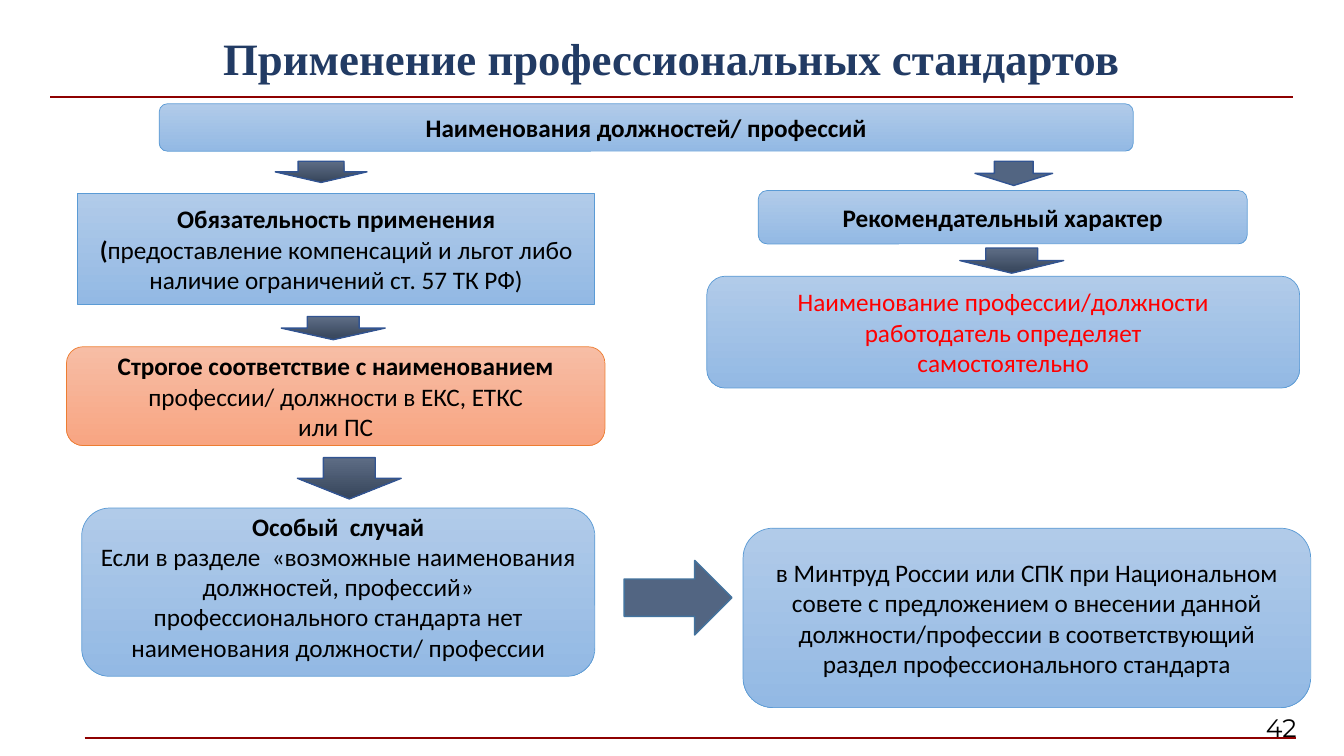
from pptx import Presentation
from pptx.dml.color import RGBColor
from pptx.enum.shapes import MSO_CONNECTOR, MSO_SHAPE
from pptx.enum.text import MSO_ANCHOR, PP_ALIGN
from pptx.oxml import parse_xml
from pptx.oxml.ns import nsdecls
from pptx.util import Inches, Pt

STRAIGHT = MSO_CONNECTOR.STRAIGHT
ROUNDED = MSO_SHAPE.ROUNDED_RECTANGLE
DOWN = MSO_SHAPE.DOWN_ARROW
RIGHT = MSO_SHAPE.RIGHT_ARROW
MIDDLE = MSO_ANCHOR.MIDDLE
CENTER = PP_ALIGN.CENTER
ALIGN_RIGHT = PP_ALIGN.RIGHT

BLACK = "000000"
RED = "FF0000"
NAVY = "223B64"
RULE = "8E0000"
SLATE = ("526582",)
SLATE_GRADIENT = ("5E6D85", "35445A")
BLUE = ("B1CBE9", "93B9E4")
BLUE_EDGE = "5B9BD5"
ORANGE = ("F7BDA5", "F8A582")
ORANGE_EDGE = "ED7D31"
ARROW_EDGE = "325491"


def color(value):
    return RGBColor.from_string(value)


class SlideBuilder:
    font = "Calibri"
    size = 18

    def __init__(self, slide):
        self.slide = slide

    def rule(self, left, right, top):
        connector = self.slide.shapes.add_connector(
            STRAIGHT, Inches(left), Inches(top), Inches(right), Inches(top))
        connector.line.color.rgb = color(RULE)
        connector.line.width = Pt(1.5)
        connector._element.spPr.append(parse_xml(f"<a:effectLst {nsdecls('a')}/>"))

    def add_text(self, frame, paragraphs, text_color=BLACK, font=font, size=size, align=CENTER):
        frame.word_wrap = True
        frame.vertical_anchor = MIDDLE
        for index, runs in enumerate(paragraphs):
            paragraph = frame.add_paragraph() if index else frame.paragraphs[0]
            paragraph.alignment = align
            for text, bold in runs:
                run = paragraph.add_run()
                run.text = text
                run.font.name = font
                run.font.size = Pt(size)
                run.font.bold = bold
                run.font.color.rgb = color(text_color)

    def label(self, area, text, bold=False, line_spacing=None, **style):
        frame = self.slide.shapes.add_textbox(*map(Inches, area)).text_frame
        frame.margin_left = frame.margin_right = 0
        frame.margin_top = frame.margin_bottom = 0
        self.add_text(frame, [[(text, bold)]], **style)
        frame.paragraphs[0].line_spacing = line_spacing

    def shape(self, kind, area, colors, edge, edge_width):
        shape = self.slide.shapes.add_shape(kind, *map(Inches, area))
        shape.shadow.inherit = False
        if len(colors) == 1:
            shape.fill.solid()
            shape.fill.fore_color.rgb = color(colors[0])
        else:
            shape.fill.gradient()
            shape.fill.gradient_angle = 270
            for stop, value in zip(shape.fill.gradient_stops, colors):
                stop.color.rgb = color(value)
        shape.line.color.rgb = color(edge)
        shape.line.width = Pt(edge_width)
        return shape

    def box(self, area, paragraphs, colors=BLUE, edge=BLUE_EDGE, text_color=BLACK):
        shape = self.shape(ROUNDED, area, colors, edge, 0.5)
        self.add_text(shape.text_frame, paragraphs, text_color)
        return shape

    def arrow(self, area, colors=SLATE_GRADIENT, kind=DOWN, edge=ARROW_EDGE):
        self.shape(kind, area, colors, edge, 1)


def main():
    presentation = Presentation()
    presentation.slide_width = Inches(13.33)
    presentation.slide_height = Inches(7.5)
    builder = SlideBuilder(presentation.slides.add_slide(presentation.slide_layouts[6]))

    builder.rule(0.84, 12.85, 7.32)
    builder.rule(0.5, 12.82, 0.96)
    builder.label((0.5, 0.25, 12.32, 0.71), "Применение профессиональных стандартов", bold=True,
                  line_spacing=0.9, text_color=NAVY, font="Times New Roman", size=32)

    builder.box((1.58, 1.03, 9.66, 0.47), [[("Наименования должностей/ профессий", True)]])
    mandatory = builder.box((0.77, 1.92, 5.13, 1.1), [[
        ("Обязательность применения (", True),
        ("предоставление компенсаций и льгот либо наличие ограничений ст. 57 ТК РФ)", False)]])
    mandatory.adjustments[0] = 0
    builder.box((7.52, 1.89, 4.85, 0.53), [[("Рекомендательный характер", True)]])
    builder.box((7.01, 2.74, 5.88, 1.11), [
        [("Наименование профессии/должности работодатель определяет", False)],
        [("самостоятельно", False)]], text_color=RED)
    special_case = builder.box((0.81, 5.04, 5.09, 1.67), [
        [("Особый  случай", True)],
        [("Если в разделе  «возможные наименования должностей, профессий» "
          "профессионального стандарта нет наименования должности/ профессии", False)]])
    special_case.text_frame.margin_bottom = Inches(0.16)
    builder.box((7.37, 5.24, 5.63, 1.78), [[
        ("в Минтруд России или СПК при Национальном совете с предложением о внесении данной "
         "должности/профессии в соответствующий раздел профессионального стандарта", False)]])
    builder.box((0.66, 3.44, 5.34, 0.98), [
        [("Строгое соответствие с наименованием ", True),
         ("профессии/ должности в ЕКС, ЕТКС", False)],
        [("или ПС", False)]], ORANGE, ORANGE_EDGE)

    for area in ((2.73, 1.6, 0.91, 0.21), (2.79, 3.14, 1.03, 0.23),
                 (2.95, 4.54, 1.03, 0.41), (9.52, 2.46, 1.03, 0.25)):
        builder.arrow(area)
    builder.arrow((9.67, 1.6, 0.77, 0.24), SLATE)
    builder.arrow((6.19, 5.56, 1.07, 0.74), SLATE, RIGHT, "43739E")

    builder.label((12.27, 7.02, 0.59, 0.4), "42", font="Montserrat", align=ALIGN_RIGHT)
    presentation.save("out.pptx")


if __name__ == "__main__":
    main()
